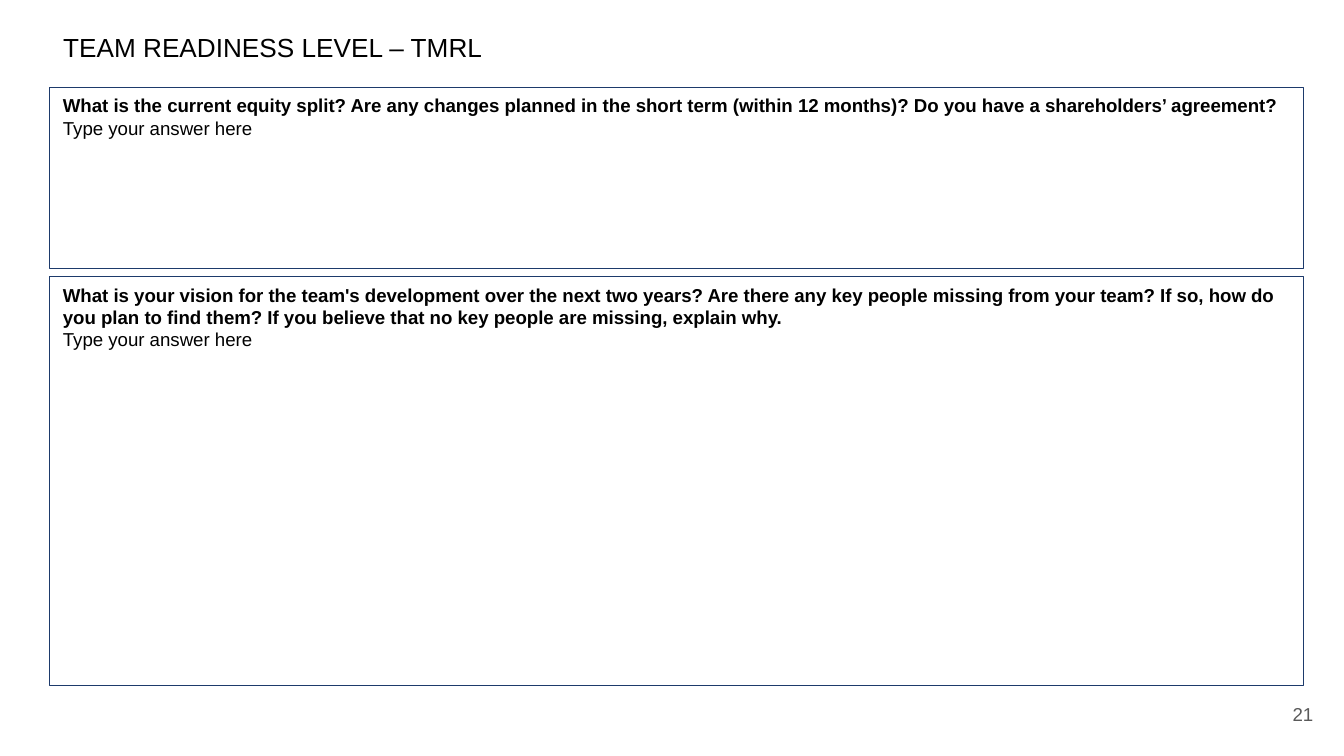
from dataclasses import dataclass

from pptx import Presentation
from pptx.dml.color import RGBColor
from pptx.enum.shapes import MSO_SHAPE
from pptx.enum.text import MSO_ANCHOR, MSO_AUTO_SIZE, PP_ALIGN
from pptx.util import Inches, Pt


@dataclass(frozen=True)
class Theme:
    font: str = "Arial"
    title_size: float = 14
    body_size: float = 10
    ink: str = "000000"
    muted: str = "595959"
    outline: str = "1D3A6B"
    outline_width: float = 0.5


THEME = Theme()
WIDTH = 10
HEIGHT = WIDTH * 9 / 16
LEFT, CONTENT_WIDTH = 0.37, 9.33
FIRST_TOP, GAP = 0.65, 0.06
PROMPT = "Type your answer here"

# Each question with the height of its answer box
QUESTIONS = [
    ("What is the current equity split? Are any changes planned in the short "
     "term (within 12 months)? Do you have a shareholders’ agreement?", 1.35),
    ("What is your vision for the team's development over the next two years? "
     "Are there any key people missing from your team? If so, how do you plan "
     "to find them? If you believe that no key people are missing, explain why.",
     3.04),
]


def write(box, lines, size, color, bold_first=False, align=PP_ALIGN.LEFT,
          anchor=MSO_ANCHOR.TOP, inset=0.1):
    """Fill a box with one paragraph per line."""
    frame = box.text_frame
    frame.text = "\n".join(lines)
    frame.word_wrap = True
    frame.auto_size = MSO_AUTO_SIZE.NONE
    frame.vertical_anchor = anchor
    frame.margin_left = frame.margin_right = Inches(0.1)
    frame.margin_top = frame.margin_bottom = Inches(inset)
    for index, para in enumerate(frame.paragraphs):
        para.alignment = align
        para.font.name = THEME.font
        para.font.size = Pt(size)
        para.font.bold = bold_first and index == 0
        para.font.color.rgb = RGBColor.from_string(color)


def set_title(page, text):
    title = page.shapes.title
    title.left, title.top = Inches(LEFT), Inches(0.13)
    title.width, title.height = Inches(CONTENT_WIDTH), Inches(0.45)
    write(title, [text], THEME.title_size, THEME.ink)


def add_question(page, question, top, height):
    box = page.shapes.add_shape(MSO_SHAPE.RECTANGLE, Inches(LEFT), Inches(top),
                                Inches(CONTENT_WIDTH), Inches(height))
    box.shadow.inherit = False
    box.fill.background()
    box.line.color.rgb = RGBColor.from_string(THEME.outline)
    box.line.width = Pt(THEME.outline_width)
    write(box, [question, PROMPT], THEME.body_size, THEME.ink,
          bold_first=True, inset=0.05)


def add_page_number(page, number):
    box = page.shapes.add_textbox(Inches(9.27), Inches(5.1),
                                  Inches(0.6), Inches(0.43))
    write(box, [number], THEME.body_size, THEME.muted,
          align=PP_ALIGN.RIGHT, anchor=MSO_ANCHOR.MIDDLE)


def main():
    deck = Presentation()
    deck.slide_width, deck.slide_height = Inches(WIDTH), Inches(HEIGHT)
    page = deck.slides.add_slide(deck.slide_layouts.get_by_name("Title Only"))

    set_title(page, "TEAM READINESS LEVEL – TMRL")
    add_page_number(page, "21")

    # Stack the question boxes with an equal gap
    top = FIRST_TOP
    for question, height in QUESTIONS:
        add_question(page, question, top, height)
        top += height + GAP

    deck.save("out.pptx")


if __name__ == "__main__":
    main()
